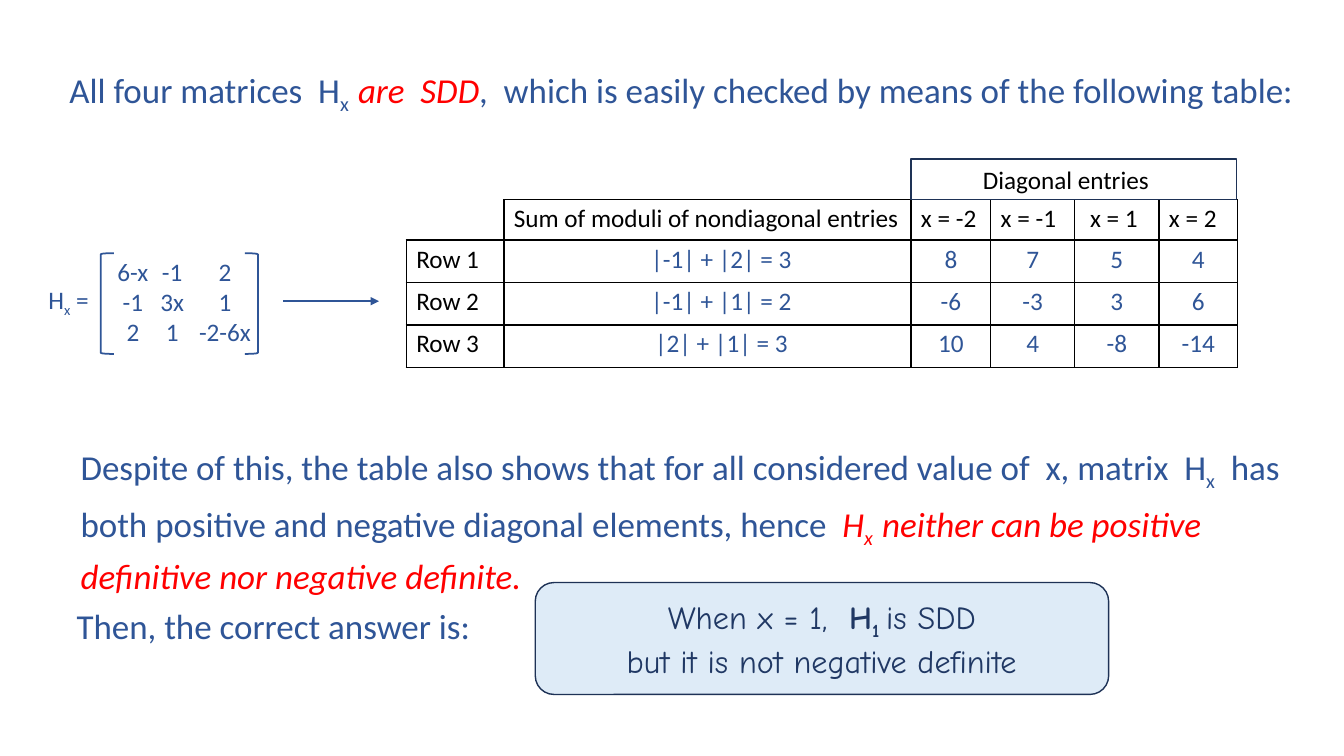
from dataclasses import dataclass

from lxml import etree
from pptx import Presentation
from pptx.dml.color import RGBColor
from pptx.enum.shapes import MSO_CONNECTOR, MSO_SHAPE
from pptx.enum.text import MSO_ANCHOR, MSO_AUTO_SIZE, PP_ALIGN
from pptx.oxml import parse_xml
from pptx.oxml.ns import nsdecls, qn
from pptx.util import Cm, Pt

LEFT, CENTER = PP_ALIGN.LEFT, PP_ALIGN.CENTER
TOP, MIDDLE = MSO_ANCHOR.TOP, MSO_ANCHOR.MIDDLE
NO_FIT = MSO_AUTO_SIZE.NONE
RECT, ROUNDED = MSO_SHAPE.RECTANGLE, MSO_SHAPE.ROUNDED_RECTANGLE
LEFT_BRACKET, RIGHT_BRACKET = MSO_SHAPE.LEFT_BRACKET, MSO_SHAPE.RIGHT_BRACKET
STRAIGHT = MSO_CONNECTOR.STRAIGHT

BLUE, RED, BLACK = "2F5597", "FF0000", "000000"
NAVY, OUTLINE, PALE = "203864", "1E3256", "DEEBF7"


@dataclass(frozen=True)
class Box:
    left: float
    top: float
    width: float
    height: float

    def emu(self) -> tuple:
        return Cm(self.left), Cm(self.top), Cm(self.width), Cm(self.height)


@dataclass(frozen=True)
class Part:
    text: str
    color: str = BLUE
    italic: bool = False
    bold: bool = False
    sub: bool = False


@dataclass(frozen=True)
class Style:
    size: float = 18
    name: str = "Calibri"
    align: int = LEFT
    anchor: int = TOP
    spacing: float = 1.0
    gap: float = 0


@dataclass(frozen=True)
class Grid:
    left: float
    top: float
    widths: list
    row_height: float
    rows: list


@dataclass(frozen=True)
class MatrixColumn:
    center: float
    width: float
    entries: list


BODY = Style(size=25, spacing=0.9, gap=10)
CENTERED = Style(align=CENTER, anchor=MIDDLE)
COLUMNS = [2.46, 10.26, 2.01, 2.11, 2.13, 1.98]

TITLE_LINE = [
    Part("All four matrices  H"), Part("x  ", sub=True), Part("are  SDD", RED, italic=True),
    Part(",  which is easily checked by means of the following table:"),
]
CONCLUSION = [
    [Part("Despite of this, the table also shows that for all considered value of  x, matrix  H"),
     Part("x", sub=True), Part("  has")],
    [Part("both positive and negative diagonal elements, hence  "), Part("H", RED, italic=True),
     Part("x  ", RED, italic=True, sub=True), Part("neither can be positive", RED, italic=True)],
    [Part("definitive nor negative definite.", RED, italic=True)],
]
ANSWER = [
    [Part("When x = 1,  ", NAVY), Part("H", NAVY, bold=True),
     Part("1 ", NAVY, bold=True, sub=True), Part("is SDD", NAVY)],
    [Part("but it is not negative definite", NAVY)],
]
HEADER = Grid(12.7, 5.03, COLUMNS[1:], 1.02, [
    ["Sum of moduli of nondiagonal entries", "x = -2", "x = -1", " x = 1", "x = 2"],
])
ROWS = Grid(10.24, 6.05, COLUMNS, 1.07, [
    ["Row 1", "|-1| + |2| = 3", "8", "7", "5", "4"],
    ["Row 2", "|-1| + |1| = 2", "-6", "-3", "3", "6"],
    ["Row 3", "|2| + |1| = 3", "10", "4", "-8", "-14"],
])
MATRIX = [
    MatrixColumn(3.35, 1.0, ["6-x", "-1", "2"]),
    MatrixColumn(4.34, 0.9, ["-1", "3x", "1"]),
    MatrixColumn(5.67, 1.6, ["2", "1", "-2-6x"]),
]


def rgb(color: str) -> RGBColor:
    return RGBColor.from_string(color)


def assign(target, values: dict) -> None:
    for key, value in values.items():
        setattr(target, key, value)


def write(tf, lines: list, style: Style) -> None:
    for i, line in enumerate(lines):
        p = tf.paragraphs[0] if i == 0 else tf.add_paragraph()
        assign(p, {"alignment": style.align, "line_spacing": style.spacing,
                   "space_before": Pt(style.gap if i else 0), "space_after": Pt(0)})
        for part in line:
            r = p.add_run()
            r.text = part.text
            assign(r.font, {"name": style.name, "size": Pt(style.size),
                            "bold": part.bold, "italic": part.italic})
            r.font.color.rgb = rgb(part.color)
            if part.sub:
                r.font._element.set("baseline", "-25000")


def set_text(sp, lines: list, style: Style) -> None:
    tf = sp.text_frame
    assign(tf, {"word_wrap": True, "auto_size": NO_FIT, "vertical_anchor": style.anchor,
                "margin_left": 0, "margin_right": 0, "margin_top": 0, "margin_bottom": 0})
    write(tf, lines, style)


def add_text(s, box: Box, lines: list, style: Style) -> None:
    set_text(s.shapes.add_textbox(*box.emu()), lines, style)


def fill_placeholder(sp, box: Box, lines: list, style: Style) -> None:
    assign(sp, dict(zip(("left", "top", "width", "height"), box.emu())))
    set_text(sp, lines, style)
    for p in sp.text_frame.paragraphs:
        pPr = p._p.get_or_add_pPr()
        pPr.set("marL", "0")
        pPr.set("indent", "0")
        etree.SubElement(pPr, qn("a:buNone"))


def add_outline(s, kind: int, box: Box, line: str, weight: float, fill: str = ""):
    sp = s.shapes.add_shape(kind, *box.emu())
    sp.shadow.inherit = False
    if fill:
        sp.fill.solid()
        sp.fill.fore_color.rgb = rgb(fill)
    else:
        sp.fill.background()
    sp.line.color.rgb = rgb(line)
    sp.line.width = Pt(weight)
    return sp


def add_grid(s, grid: Grid, styles: list, colors: list, insets: list) -> None:
    height = grid.row_height * len(grid.rows)
    box = Box(grid.left, grid.top, sum(grid.widths), height)
    table = s.shapes.add_table(len(grid.rows), len(grid.widths), *box.emu()).table
    assign(table, {"first_row": False, "horz_banding": False})
    for column, width in zip(table.columns, grid.widths):
        column.width = Cm(width)
    for row, texts in zip(table.rows, grid.rows):
        row.height = Cm(grid.row_height)
        for cell, text, style, color, inset in zip(row.cells, texts, styles, colors, insets):
            assign(cell, {"margin_left": Cm(inset), "margin_right": Cm(0.2),
                          "margin_top": Cm(0.1), "margin_bottom": Cm(0.1)})
            write(cell.text_frame, [[Part(text, color)]], style)
            tcPr = cell._tc.get_or_add_tcPr()
            for side in "LRTB":
                tcPr.append(parse_xml(
                    f'<a:ln{side} {nsdecls("a")} w="12700"><a:solidFill>'
                    f'<a:srgbClr val="{BLACK}"/></a:solidFill></a:ln{side}>'))
            cell.fill.background()


def add_arrow(s, x1: float, x2: float, y: float) -> None:
    line = s.shapes.add_connector(STRAIGHT, Cm(x1), Cm(y), Cm(x2), Cm(y))
    line.line.color.rgb = rgb(BLUE)
    line.line.width = Pt(1.25)
    etree.SubElement(line.line._get_or_add_ln(), qn("a:tailEnd"), type="triangle")
    etree.SubElement(line._element.spPr, qn("a:effectLst"))


def main() -> None:
    prs = Presentation()
    prs.slide_width, prs.slide_height = Cm(33.87), Cm(19.05)
    s = prs.slides.add_slide(prs.slide_layouts[1])
    fill_placeholder(s.shapes.title, Box(1.75, 1.73, 31.5, 1.3), [TITLE_LINE], BODY)
    fill_placeholder(s.placeholders[1], Box(2.03, 11.23, 31.5, 4), CONCLUSION, BODY)

    add_grid(s, ROWS, [Style()] + [CENTERED] * 5, [BLACK] + [BLUE] * 5, [0.25, 0.9] + [0.2] * 4)
    add_grid(s, HEADER, [Style()] * 5, [BLACK] * 5, [0.25] * 5)
    diagonal = add_outline(s, RECT, Box(22.96, 4.01, 8.2, 1.02), OUTLINE, 1.25)
    set_text(diagonal, [[Part("Diagonal entries", BLACK)]], CENTERED)
    diagonal.text_frame.margin_right = Cm(0.4)

    answer = add_outline(s, ROUNDED, Box(13.49, 14.68, 14.45, 2.82), OUTLINE, 1, PALE)
    set_text(answer, ANSWER, Style(23, "Comic Neue", CENTER, MIDDLE))
    add_text(s, Box(1.93, 15.35, 11, 1.3), [[Part("Then, the correct answer is:")]], BODY)

    add_text(s, Box(1.22, 7.16, 1.3, 0.9), [[Part("H"), Part("x", sub=True), Part(" =")]], Style())
    for column in MATRIX:
        box = Box(column.center - column.width / 2, 6.45, column.width, 2.4)
        add_text(s, box, [[Part(entry)] for entry in column.entries], Style(align=CENTER))
    for kind, left in ((LEFT_BRACKET, 2.54), (RIGHT_BRACKET, 6.17)):
        add_outline(s, kind, Box(left, 6.38, 0.33, 2.54), BLUE, 1.25)
    add_arrow(s, 7.14, 9.55, 7.59)
    prs.save("out.pptx")


if __name__ == "__main__":
    main()
